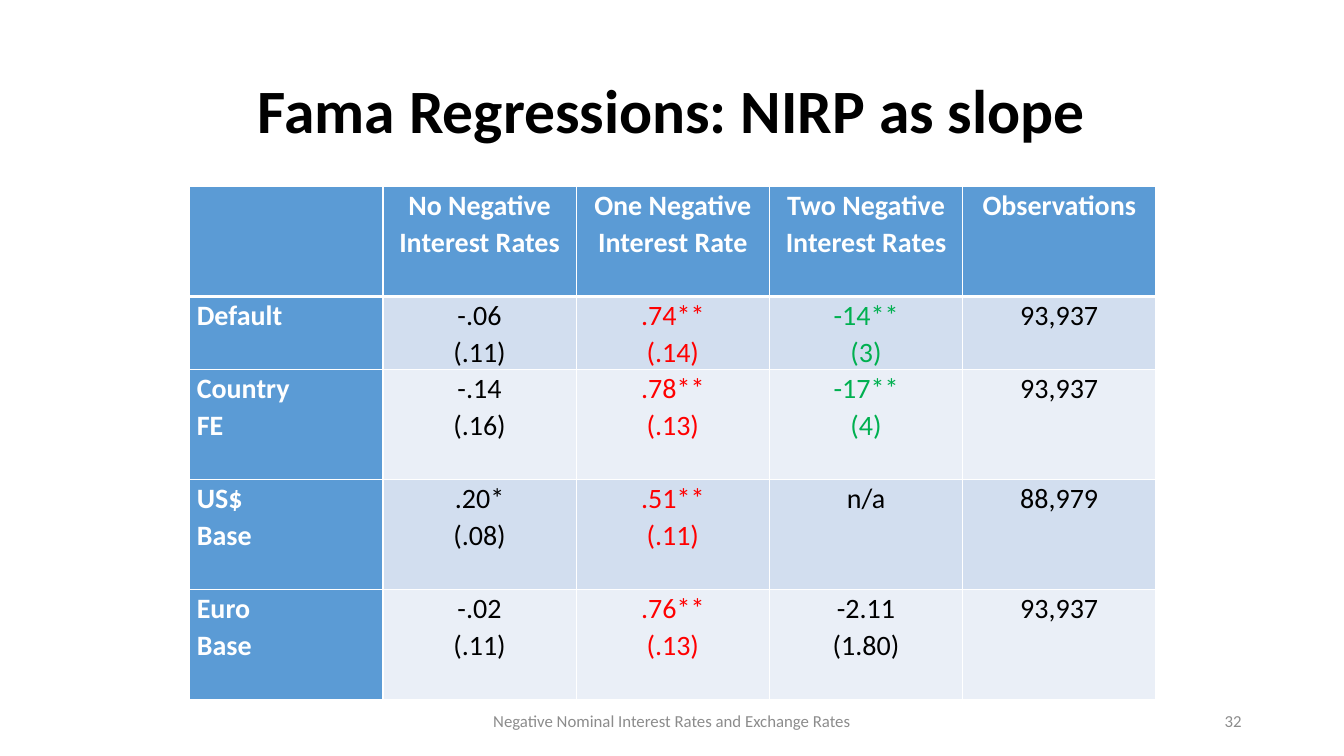
from lxml import etree
from pptx import Presentation
from pptx import util as u
from pptx.dml.color import RGBColor
from pptx.enum import text
from pptx.oxml import ns

TITLE = "Fama Regressions: NIRP as slope"
HEADER = [
    "",
    "No Negative\nInterest Rates",
    "One Negative\nInterest Rate",
    "Two Negative\nInterest Rates",
    "Observations",
]
ROWS = [
    ["Default", "-.06\n(.11)", ".74**\n(.14)", "-14**\n(3)", "93,937"],
    ["Country\nFE", "-.14\n(.16)", ".78**\n(.13)", "-17**\n(4)", "93,937"],
    ["US$\nBase", ".20*\n(.08)", ".51**\n(.11)", "n/a", "88,979"],
    ["Euro\nBase", "-.02\n(.11)", ".76**\n(.13)", "-2.11\n(1.80)", "93,937"],
]
FOOTER = "Negative Nominal Interest Rates and Exchange Rates"
PAGE = "32"

THEME = {
    "font": "Calibri",
    "title_size": 44, "table_size": 20, "footer_size": 12,
    "ink": "000000", "white": "FFFFFF", "muted": "8C8C8C",
    "accent": "5B9BD5", "bands": ("D2DEEF", "EAEFF7"),
    "significant": {2: "FF0000", 3: "00B050"},
}
LEFT, CENTER, RIGHT = text.PP_ALIGN.LEFT, text.PP_ALIGN.CENTER, text.PP_ALIGN.RIGHT
COL_WIDTH, ROW_HEIGHT, SHORT_ROW = 4.87, 2.77, 1.85


def set_attrs(obj, values):
    for name, value in values.items():
        setattr(obj, name, value)


def write(tf, content, size, color, align, bold=False, spacing=None):
    for i, line in enumerate(content.split("\n")):
        p = tf.paragraphs[0] if i == 0 else tf.add_paragraph()
        set_attrs(p, {"alignment": align, "line_spacing": spacing})
        if line:
            r = p.add_run()
            r.text = line
            set_attrs(r.font, {"name": THEME["font"], "size": u.Pt(size), "bold": bold})
            r.font.color.rgb = RGBColor.from_string(color)


def add_borders(cell, widths):
    tc_pr = cell._tc.get_or_add_tcPr()
    for side, width in widths.items():
        ln = etree.SubElement(tc_pr, ns.qn(f"a:ln{side}"), w=str(u.Pt(width)))
        fill = etree.SubElement(ln, ns.qn("a:solidFill"))
        etree.SubElement(fill, ns.qn("a:srgbClr"), val=THEME["white"])


def add_regression_table(s):
    data = [HEADER] + ROWS
    heights = [SHORT_ROW if i == 1 else ROW_HEIGHT for i in range(len(data))]
    frame = s.shapes.add_table(
        len(data), len(HEADER), u.Cm(4.78), u.Cm(4.7),
        u.Cm(COL_WIDTH * len(HEADER)), u.Cm(sum(heights)))
    table = frame.table
    table.first_col = True
    for col in table.columns:
        col.width = u.Cm(COL_WIDTH)
    for i, (row, height) in enumerate(zip(data, heights)):
        table.rows[i].height = u.Cm(height)
        for j, content in enumerate(row):
            cell = table.cell(i, j)
            label = i == 0 or j == 0
            color = THEME["white"] if label else THEME["ink"]
            if "**" in content:
                color = THEME["significant"][j]
            set_attrs(cell, {
                "margin_left": u.Cm(0.18), "margin_right": u.Cm(0.18),
                "margin_top": 0, "margin_bottom": 0,
                "vertical_anchor": text.MSO_ANCHOR.TOP,
            })
            add_borders(cell, {
                "L": 1, "R": 1, "T": 3 if i == 1 else 1, "B": 3 if i == 0 else 1})
            cell.fill.solid()
            cell.fill.fore_color.rgb = RGBColor.from_string(
                THEME["accent"] if label else THEME["bands"][(i - 1) % 2])
            write(cell.text_frame, content, THEME["table_size"], color,
                  CENTER if i == 0 or j else LEFT, label, 1.07)


def add_footer(s, content, left, width, align):
    sp = s.shapes.add_textbox(u.Cm(left), u.Cm(17.65), u.Cm(width), u.Cm(1.02))
    tf = sp.text_frame
    set_attrs(tf, {"word_wrap": True, "vertical_anchor": text.MSO_ANCHOR.MIDDLE})
    write(tf, content, THEME["footer_size"], THEME["muted"], align)


def main():
    prs = Presentation()
    set_attrs(prs, {"slide_width": u.Cm(33.87), "slide_height": u.Cm(19.05)})
    s = prs.slides.add_slide(prs.slide_layouts[5])
    title = s.shapes.title
    set_attrs(title, {"left": u.Cm(2.33), "top": u.Cm(1.01),
                      "width": u.Cm(29.21), "height": u.Cm(3.68)})
    title.text_frame.vertical_anchor = text.MSO_ANCHOR.MIDDLE
    write(title.text_frame, TITLE, THEME["title_size"], THEME["ink"], CENTER, True, 0.9)
    add_regression_table(s)
    add_footer(s, FOOTER, 11.22, 11.43, CENTER)
    add_footer(s, PAGE, 23.92, 7.62, RIGHT)
    prs.save("out.pptx")


if __name__ == "__main__":
    main()
